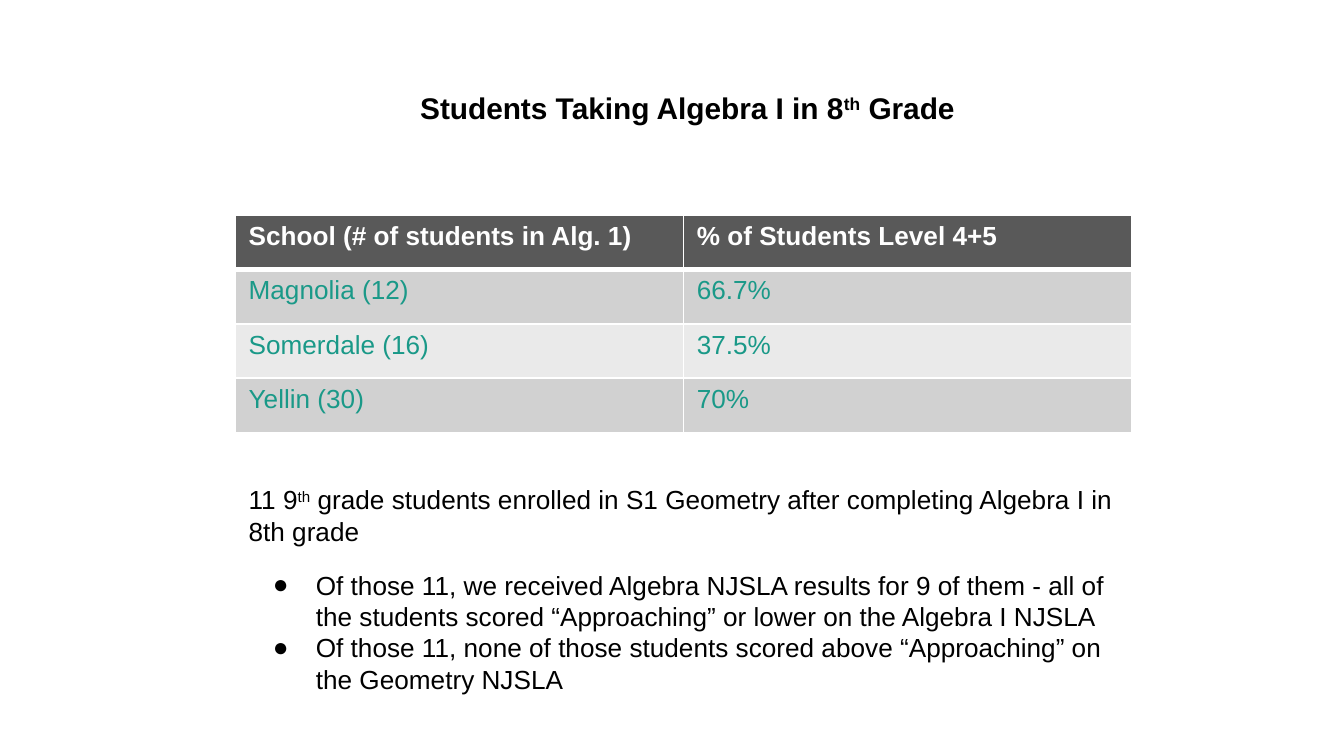
from lxml.etree import SubElement
from pptx import Presentation
from pptx.dml.color import RGBColor
from pptx.enum.text import MSO_ANCHOR, MSO_AUTO_SIZE, PP_ALIGN
from pptx.oxml.ns import qn
from pptx.util import Inches, Pt

COLORS = {"text": "000000", "header": "595959", "white": "FFFFFF",
          "teal": "1A9988", "odd": "D1D1D1", "even": "EAEAEA"}


def style(para, size, color, bold=False):
    para.font.name = "Arial"
    para.font.size = Pt(size)
    para.font.bold = bold
    para.font.color.rgb = RGBColor.from_string(COLORS[color])


def add_spans(para, before, superscript, after):
    for text in (before, superscript, after):
        span = para.add_run()
        span.text = text
        if text == superscript:
            span._r.get_or_add_rPr().set("baseline", "30000")


deck = Presentation()
deck.slide_width, deck.slide_height = Inches(10), Inches(10 * 9 / 16)
page = deck.slides.add_slide(deck.slide_layouts[1])
title, body = page.placeholders

title.left, title.top = Inches(2), Inches(0.62)
title.width, title.height = Inches(6.23), Inches(0.37)
body.left, body.top = Inches(1.75), Inches(3.55)
body.width, body.height = Inches(6.74), Inches(1.92)
for box in (title, body):
    box.text_frame.word_wrap = True
    box.text_frame.auto_size = MSO_AUTO_SIZE.NONE
    box.text_frame.vertical_anchor = MSO_ANCHOR.TOP

para = title.text_frame.paragraphs[0]
para.alignment = PP_ALIGN.CENTER
style(para, 16, "text", bold=True)
add_spans(para, "Students Taking Algebra I in 8", "th", " Grade")

rows = [
    ("School (# of students in Alg. 1)", "% of Students Level 4+5"),
    ("Magnolia (12)", "66.7%"),
    ("Somerdale (16)", "37.5%"),
    ("Yellin (30)", "70%"),
]
table = page.shapes.add_table(len(rows), 2, Inches(1.75), Inches(1.6),
                              Inches(6.67), Inches(1.62)).table
for r, row in enumerate(rows):
    for c, text in enumerate(row):
        cell = table.cell(r, c)
        cell.text = text
        style(cell.text_frame.paragraphs[0], 14, "teal" if r else "white", bold=r == 0)
        widths = {"lnL": 1, "lnR": 1, "lnT": 3 if r == 1 else 1, "lnB": 1 if r else 3}
        for side, width in widths.items():
            line = SubElement(cell._tc.get_or_add_tcPr(), qn(f"a:{side}"), w=str(Pt(width)))
            fill = SubElement(line, qn("a:solidFill"))
            SubElement(fill, qn("a:srgbClr"), val=COLORS["white"])
        shade = "header" if r == 0 else "odd" if r % 2 else "even"
        cell.fill.solid()
        cell.fill.fore_color.rgb = RGBColor.from_string(COLORS[shade])

bullets = [
    "Of those 11, we received Algebra NJSLA results for 9 of them - all of the students "
    "scored “Approaching” or lower on the Algebra I NJSLA",
    "Of those 11, none of those students scored above “Approaching” on the Geometry NJSLA",
]
frame = body.text_frame
add_spans(frame.paragraphs[0], "11 9", "th",
          " grade students enrolled in S1 Geometry after completing Algebra I in 8th grade")
for text in bullets:
    frame.add_paragraph().text = text
for para, space in zip(frame.paragraphs, (12, 12, 0)):
    style(para, 14, "text")
    para.space_before = Pt(space)
    bulleted = para.text in bullets
    properties = para._p.get_or_add_pPr()
    properties.set("marL", str(Inches(0.5 if bulleted else 0)))
    properties.set("indent", str(Inches(-0.32 if bulleted else 0)))
    bullet = properties.makeelement(qn("a:buChar" if bulleted else "a:buNone"),
                                    {"char": "●"} if bulleted else {})
    properties.find(qn("a:defRPr")).addprevious(bullet)

deck.save("out.pptx")
